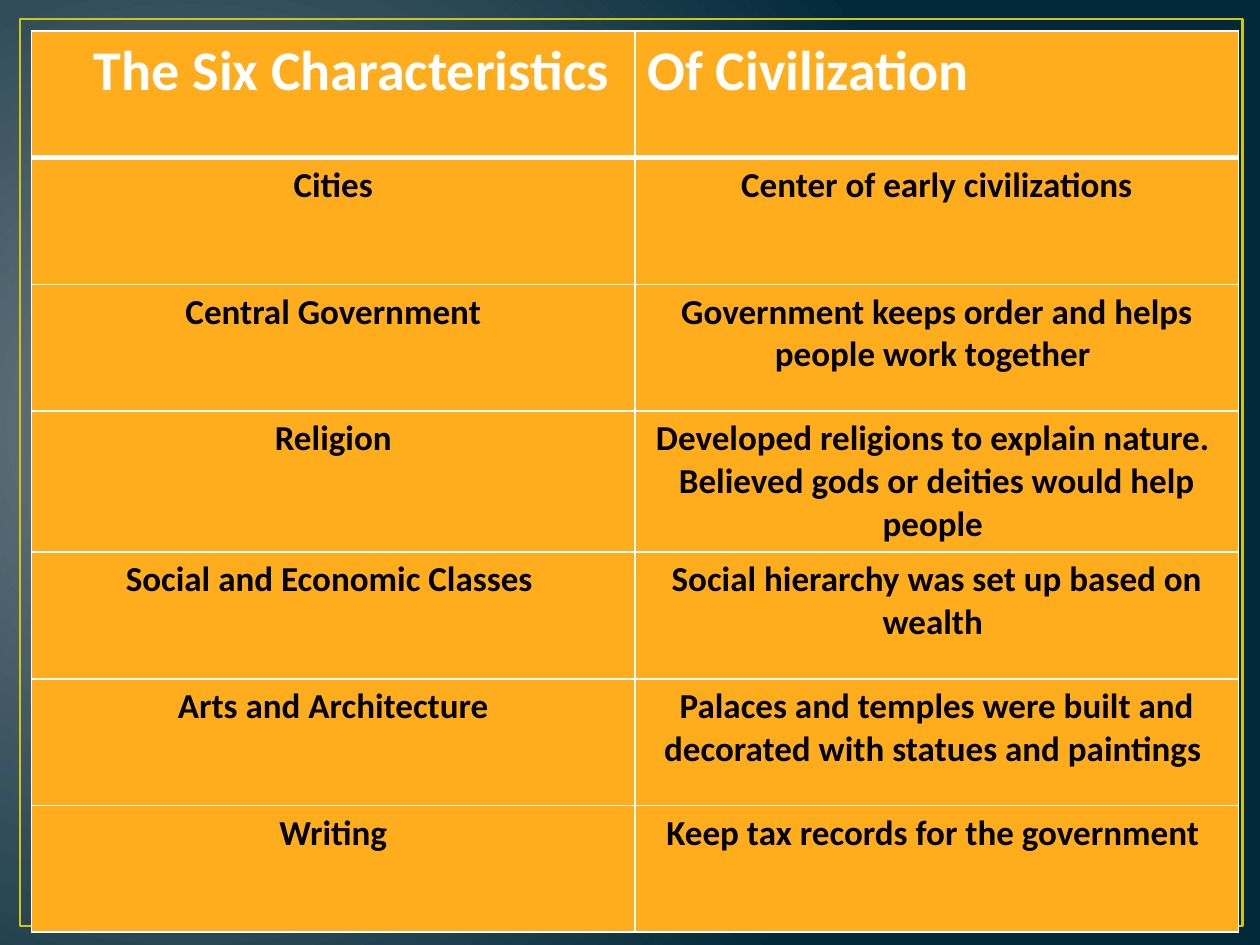
from pptx import Presentation
from pptx.dml.color import RGBColor
from pptx.enum.shapes import MSO_SHAPE
from pptx.enum.text import PP_ALIGN
from pptx.oxml import parse_xml
from pptx.oxml.ns import nsdecls, qn
from pptx.util import Inches, Pt

GREY = RGBColor(0x71, 0x7C, 0x84)
NAVY = RGBColor(0x01, 0x29, 0x3A)
LIME = RGBColor(0xCF, 0xC6, 0x0D)
AMBER = RGBColor(0xFF, 0xAD, 0x1C)
WHITE = RGBColor(0xFF, 0xFF, 0xFF)
BLACK = RGBColor(0, 0, 0)

ROWS = [
    ("The Six Characteristics ", "Of Civilization"),
    ("Cities", "Center of early civilizations"),
    ("Central Government",
     "Government keeps order and helps people work together "),
    ("Religion",
     "Developed religions to explain nature.  "
     "Believed gods or deities would help people "),
    ("Social and Economic Classes ",
     "Social hierarchy was set up based on wealth "),
    ("Arts and Architecture",
     "Palaces and temples were built and decorated "
     "with statues and paintings "),
    ("Writing", "Keep tax records for the government "),
]


class Deck:
    font = "Calibri"
    wide, high = Inches(10), Inches(7.5)

    def __init__(self):
        self.file = Presentation()
        self.file.slide_width, self.file.slide_height = self.wide, self.high
        self.slide = self.file.slides.add_slide(self.file.slide_layouts[6])

    def box(self, x, y, w, h):
        """Turn shares of the slide into lengths."""
        return (int(x * self.wide), int(y * self.high),
                int(w * self.wide), int(h * self.high))

    def glow(self, inner, outer):
        """Fill the background with a round gradient."""
        fill = self.slide.background.fill
        fill.gradient()
        for stop, color, place in zip(fill.gradient_stops, (inner, outer), (0, 1)):
            stop.color.rgb = color
            stop.position = place
        grad = self.slide.element.find(".//" + qn("a:gradFill"))
        grad.replace(grad.find(qn("a:lin")), parse_xml(
            f'<a:path {nsdecls("a")} path="circle"><a:fillToRect '
            'l="15000" t="50000" r="85000" b="60000"/></a:path>'))

    def frame(self, area, color, width):
        shape = self.slide.shapes.add_shape(MSO_SHAPE.RECTANGLE, *self.box(*area))
        shape.shadow.inherit = False
        shape.fill.background()
        shape.line.color.rgb = color
        shape.line.width = Pt(width)

    def edge(self, cell, side, width):
        cell._tc.get_or_add_tcPr().append(parse_xml(
            f'<a:ln{side} {nsdecls("a")} w="{Pt(width)}"><a:solidFill>'
            f'<a:srgbClr val="{WHITE}"/></a:solidFill></a:ln{side}>'))

    def cell(self, cell, text, row, align):
        thick = {("B", 0): 3, ("T", 1): 3}
        for side in "LRTB":
            self.edge(cell, side, thick.get((side, row), 1))
        cell.fill.solid()
        cell.fill.fore_color.rgb = AMBER
        cell.text = text
        para = cell.text_frame.paragraphs[0]
        para.alignment = align
        para.font.name = self.font
        para.font.bold = True
        para.font.size = Pt(20 if row else 32)
        para.font.color.rgb = BLACK if row else WHITE

    def table(self, area, rows):
        grid = self.slide.shapes.add_table(
            len(rows), len(rows[0]), *self.box(*area)).table
        heads = PP_ALIGN.RIGHT, PP_ALIGN.LEFT
        for r, texts in enumerate(rows):
            for c, text in enumerate(texts):
                align = PP_ALIGN.CENTER if r else heads[c]
                self.cell(grid.cell(r, c), text, r, align)


def main():
    deck = Deck()
    # Background and border
    deck.glow(GREY, NAVY)
    deck.frame((0.016, 0.02, 0.97, 0.96), LIME, 1.5)
    # Table of characteristics
    deck.table((0.025, 0.033, 0.958, 0.938), ROWS)
    deck.file.save("out.pptx")


if __name__ == "__main__":
    main()
